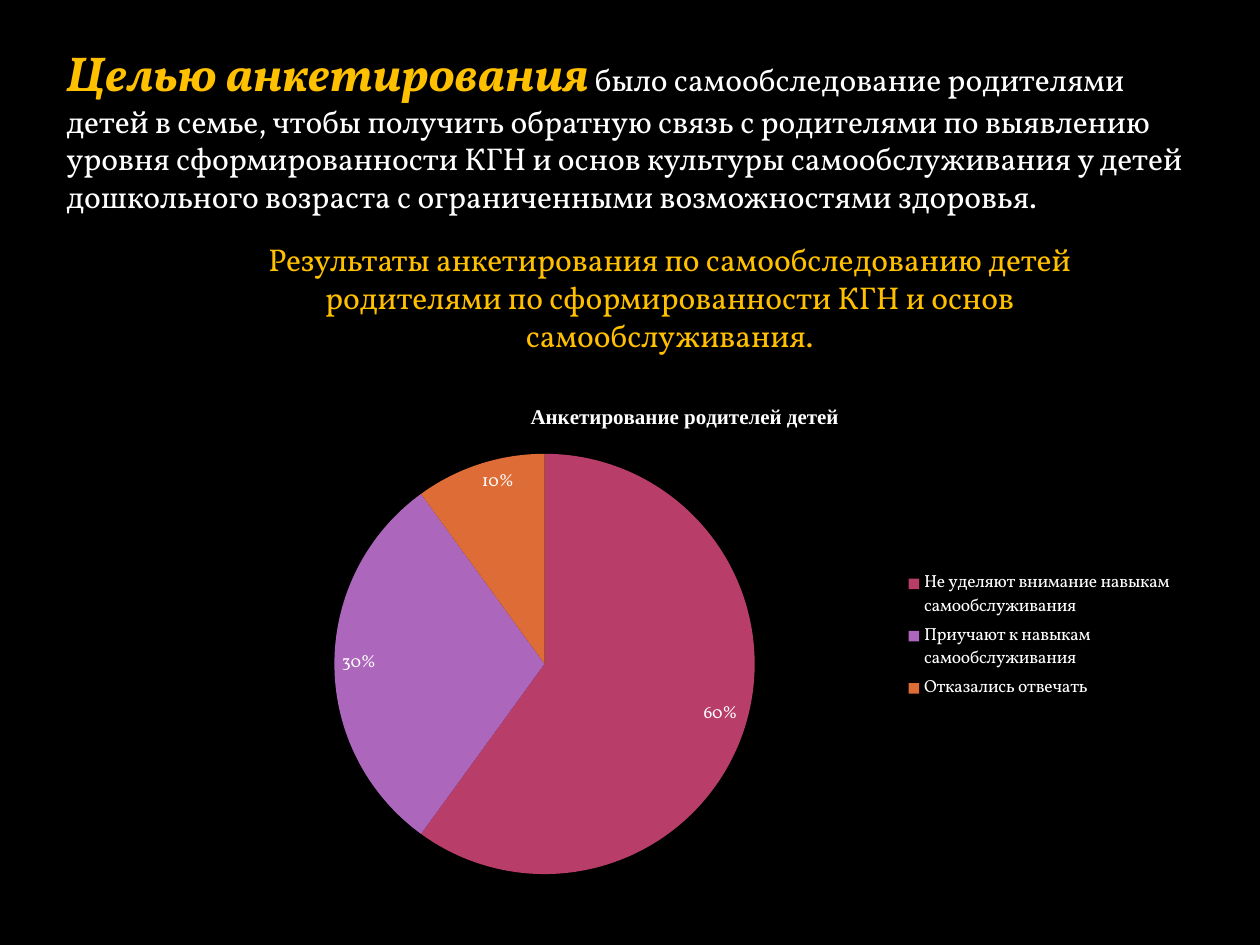
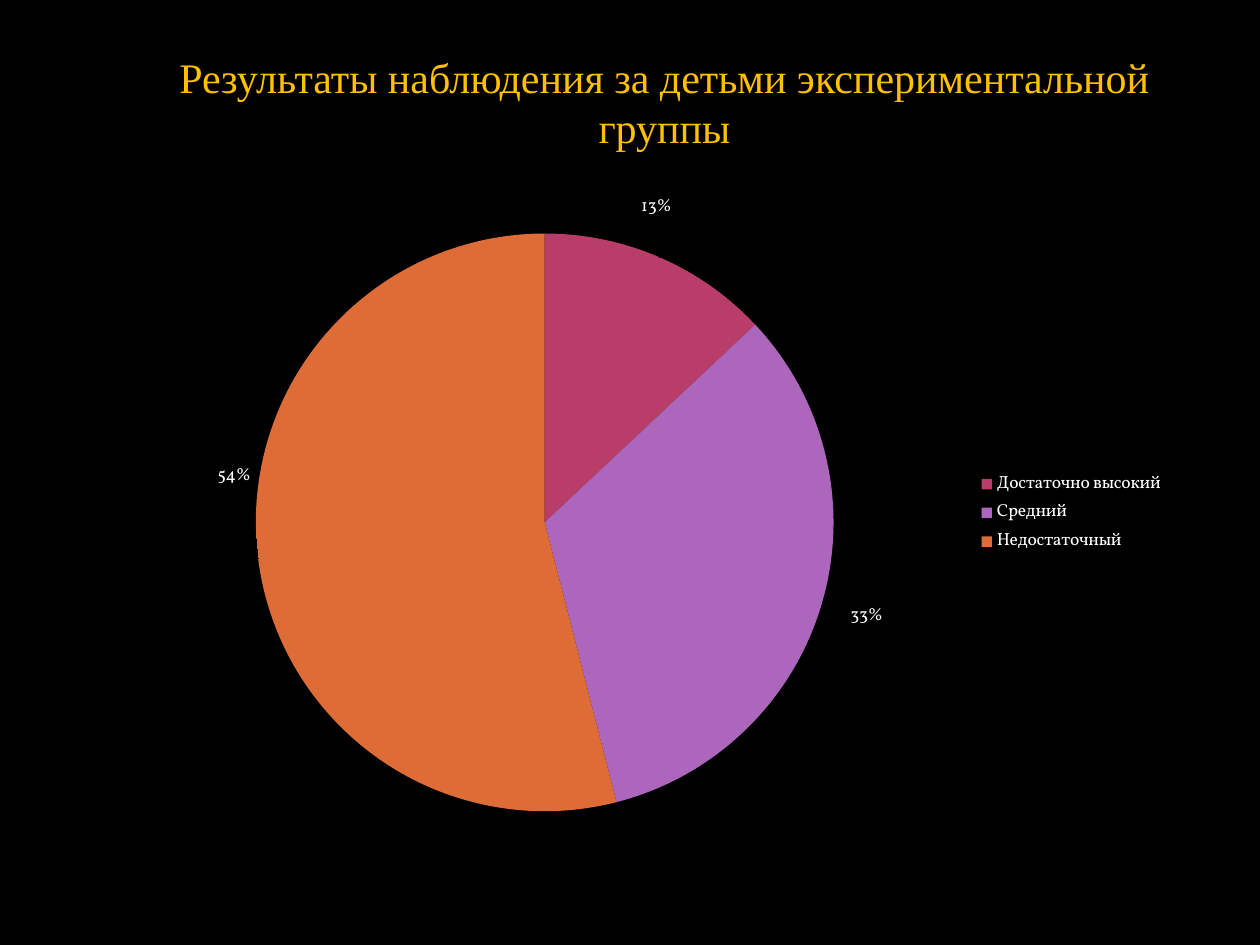
"""Build two slides with pie charts of the parent survey and the group observation."""
from dataclasses import dataclass

from lxml.etree import SubElement
from pptx import Presentation
from pptx.chart.chart import Chart
from pptx.chart.data import CategoryChartData
from pptx.dml.color import RGBColor
from pptx.enum.chart import XL_CHART_TYPE as ChartType
from pptx.enum.chart import XL_LABEL_POSITION as LabelPosition
from pptx.enum.chart import XL_LEGEND_POSITION as LegendPosition
from pptx.enum.text import PP_ALIGN as Align
from pptx.oxml import parse_xml
from pptx.oxml.ns import nsdecls, qn
from pptx.slide import Slide
from pptx.util import Cm, Pt

COLORS = {"background": "000000", "text": "FFFFFF", "accent": "FFC000"}
SLICE_COLORS = {"first": "B83D68", "second": "AC66BB", "third": "DE6C36"}
SERIF, TITLE_FONT = "Vollkorn", "Times New Roman"


@dataclass(frozen=True)
class Box:
    """Position and size in centimetres."""
    left: float
    top: float
    width: float
    height: float

    def lengths(self) -> tuple:
        """Return the four values as lengths."""
        return Cm(self.left), Cm(self.top), Cm(self.width), Cm(self.height)


@dataclass(frozen=True)
class TextRun:
    """A piece of text with its own look."""
    text: str
    size: int = 18
    font: str = SERIF
    color: str = "accent"
    emphasis: bool = False


@dataclass(frozen=True)
class Caption:
    """A text box holding one paragraph."""
    box: Box
    runs: tuple[TextRun, ...]
    align: Align = Align.CENTER


@dataclass(frozen=True)
class Pie:
    """A pie chart with its values and inner layout."""
    box: Box
    slices: dict[str, float]
    plot_layout: dict[str, float]
    label_position: LabelPosition
    label_offsets: tuple[tuple[float, float], ...] = ()
    title: str = ""


SURVEY_CAPTIONS = (
    Caption(Box(1.09, 0.74, 23.6, 3.76), (
        TextRun("Целью анкетирования", size=28, emphasis=True),
        TextRun(" было самообследование родителями детей в семье, чтобы получить "
                "обратную связь с родителями по выявлению уровня сформированности КГН "
                "и основ культуры самообслуживания у детей дошкольного возраста "
                "с ограниченными возможностями здоровья.", color="text"),
    ), Align.LEFT),
    Caption(Box(4.5, 4.72, 18, 2.57), (
        TextRun("Результаты анкетирования по самообследованию детей родителями "
                "по сформированности КГН и основ самообслуживания."),
    )),
)
SURVEY_PIE = Pie(
    Box(3.71, 7.72, 20.19, 10.21),
    {"Не уделяют внимание навыкам самообслуживания": 0.6,
     "Приучают к навыкам самообслуживания": 0.3,
     "Отказались отвечать": 0.1},
    {"x": 0.15, "y": 0.14, "w": 0.42, "h": 0.83},
    LabelPosition.INSIDE_END,
    title="Анкетирование родителей детей",
)
OBSERVATION_CAPTIONS = (
    Caption(Box(2.69, 0.91, 21.41, 2.31), (
        TextRun("Результаты наблюдения за детьми экспериментальной группы",
                size=24, font=TITLE_FONT),
    )),
)
OBSERVATION_PIE = Pie(
    Box(2.31, 3.94, 21.41, 12.8),
    {"Достаточно высокий": 0.13, "Средний": 0.33, "Недостаточный": 0.54},
    {"x": 0.13, "y": 0.06, "w": 0.55, "h": 0.91},
    LabelPosition.OUTSIDE_END,
    label_offsets=((-0.02, -0.06), (0.02, 0), (0, -0.15)),
)


def rgb(name: str) -> RGBColor:
    """Look up a named colour."""
    return RGBColor.from_string(COLORS[name])


def add_caption(slide: Slide, caption: Caption) -> None:
    """Draw a caption."""
    frame = slide.shapes.add_textbox(*caption.box.lengths()).text_frame
    frame.word_wrap = True
    paragraph = frame.paragraphs[0]
    paragraph.alignment = caption.align
    for part in caption.runs:
        run = paragraph.add_run()
        run.text = part.text
        run.font.name, run.font.size = part.font, Pt(part.size)
        run.font.bold = run.font.italic = part.emphasis
        run.font.color.rgb = rgb(part.color)


def make_layout(values: dict[str, float], inner: bool = False):
    """Return a manual chart layout element."""
    layout = parse_xml(f"<c:layout {nsdecls('c')}><c:manualLayout/></c:layout>")
    settings = {"layoutTarget": "inner", "xMode": "edge", "yMode": "edge"} if inner else {}
    for tag, value in (settings | values).items():
        SubElement(layout[0], qn(f"c:{tag}"), val=str(value))
    return layout


def set_plot_layout(chart: Chart, values: dict[str, float]) -> None:
    """Fix the place of the pie inside the chart."""
    plot_area = chart.element.find(".//" + qn("c:plotArea"))
    for layout in plot_area.findall(qn("c:layout")):
        plot_area.remove(layout)
    plot_area.insert(0, make_layout(values, inner=True))


def add_pie(slide: Slide, pie: Pie) -> None:
    """Draw a pie chart with a legend and percentage labels."""
    data = CategoryChartData(number_format="0%")
    data.categories = list(pie.slices)
    data.add_series("Series 1", list(pie.slices.values()))
    chart = slide.shapes.add_chart(ChartType.PIE, *pie.box.lengths(), data).chart
    chart.font.name, chart.font.size = SERIF, Pt(10)
    chart.font.color.rgb = rgb("text")
    chart.has_legend = True
    chart.legend.position = LegendPosition.RIGHT
    chart.legend.include_in_layout = False
    chart.has_title = bool(pie.title)
    if pie.title:
        paragraph = chart.chart_title.text_frame.paragraphs[0]
        paragraph.text = pie.title
        paragraph.font.name, paragraph.font.size = TITLE_FONT, Pt(12)
        paragraph.font.bold = True
        paragraph.font.color.rgb = rgb("text")
    set_plot_layout(chart, pie.plot_layout)

    plot = chart.plots[0]
    plot.vary_by_categories = True
    series = plot.series[0]
    for index, color in enumerate(SLICE_COLORS.values()):
        fill = series.points[index].format.fill
        fill.solid()
        fill.fore_color.rgb = RGBColor.from_string(color)
    labels = series.data_labels
    labels.show_value = True
    labels.number_format, labels.number_format_is_linked = "0%", False
    labels.position = pie.label_position
    for index, (x, y) in enumerate(pie.label_offsets):
        series.points[index].data_label.position = pie.label_position
        label = labels._element.findall(qn("c:dLbl"))[index]
        label.insert(1, make_layout({"x": x, "y": y}))


def main() -> None:
    """Build and save the presentation."""
    presentation = Presentation()
    presentation.slide_width, presentation.slide_height = Cm(25.4), Cm(19.05)
    pages = ((SURVEY_CAPTIONS, SURVEY_PIE), (OBSERVATION_CAPTIONS, OBSERVATION_PIE))
    for captions, pie in pages:
        slide = presentation.slides.add_slide(presentation.slide_layouts[6])
        slide.background.fill.solid()
        slide.background.fill.fore_color.rgb = rgb("background")
        for caption in captions:
            add_caption(slide, caption)
        add_pie(slide, pie)
    presentation.save("out.pptx")


if __name__ == "__main__":
    main()
